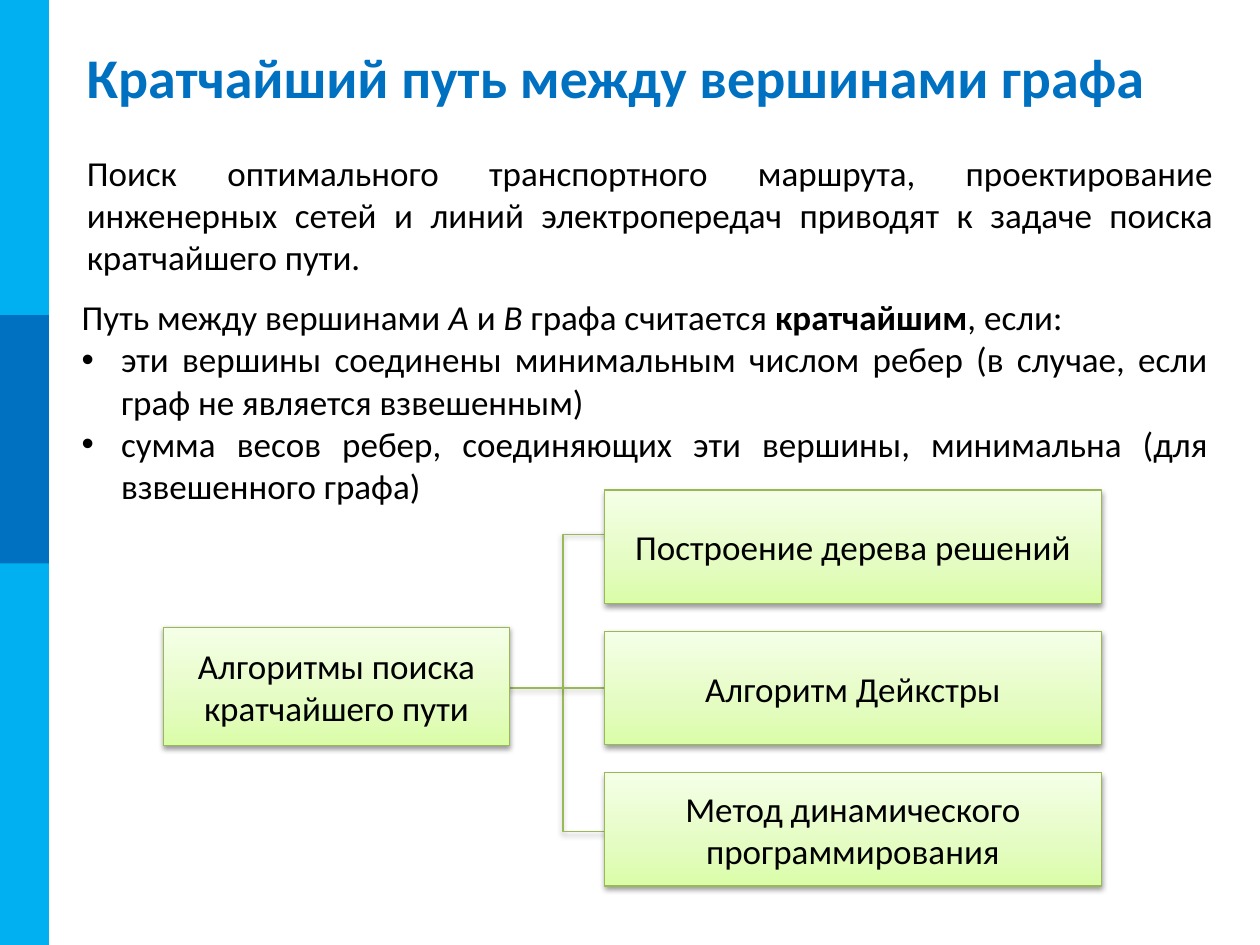
from lxml.etree import SubElement
from pptx import Presentation
from pptx.dml.color import RGBColor
from pptx.enum.shapes import MSO_CONNECTOR as Connector, MSO_SHAPE as Shape
from pptx.enum.text import MSO_ANCHOR as Anchor, PP_ALIGN as Align
from pptx.oxml.ns import qn
from pptx.util import Pt

TITLE = "Кратчайший путь между вершинами графа"
INTRO = [[("Поиск оптимального транспортного маршрута, проектирование инженерных сетей "
           "и линий электропередач приводят к задаче поиска кратчайшего пути.", "")]]
DEFINITION = [[("Путь между вершинами ", ""), ("А ", "i"), ("и ", ""), ("В ", "i"),
               ("графа считается ", ""), ("кратчайшим", "b"), (", если:", "")]]
CONDITIONS = [
    [("эти вершины соединены минимальным числом ребер "
      "(в случае, если граф не является взвешенным)", "")],
    [("сумма весов ребер, соединяющих эти вершины, минимальна "
      "(для взвешенного графа)", "")],
]
ROOT = "Алгоритмы поиска кратчайшего пути"
METHODS = ["Построение дерева решений", "Алгоритм Дейкстры",
           "Метод динамического программирования"]

SKY, BLUE, BLACK, GREEN = "00B0F0", "0070C0", "000000", "98B955"
GRADIENT = [(0, "DAFDA7"), (35, "E4FCC2"), (100, "F5FFE7")]

BAR_WIDTH = 28
ROOT_BOX = (93.5, 358.5, 197.7, 67.7)
METHOD_X, METHOD_Y, METHOD_W, METHOD_H, METHOD_PITCH = 345.6, 280.1, 283.7, 64.8, 80.7
BRACKET = [(361.4, 475.2), (321.8, 475.2), (321.8, 305.3), (352.8, 305.3)]
TRUNK_X, TRUNK_Y = 236.2, 393.1


def color(hex_code):
    return RGBColor.from_string(hex_code)


def style_run(run, size, hex_code, style=""):
    font = run.font
    font.name, font.size = "Calibri", Pt(size)
    font.color.rgb = color(hex_code)
    font.bold, font.italic = "b" in style, "i" in style


def add_text(box, paragraphs, size=20, hex_code=BLACK, align=Align.JUSTIFY, bullets_from=None):
    """Add a text box; paragraphs from index bullets_from on get a bullet."""
    frame = slide.shapes.add_textbox(*map(Pt, box)).text_frame
    frame.word_wrap = True
    for index, pieces in enumerate(paragraphs):
        paragraph = frame.add_paragraph() if index else frame.paragraphs[0]
        paragraph.alignment = align
        for text, style in pieces:
            run = paragraph.add_run()
            run.text = text
            style_run(run, size, hex_code, style)
        if bullets_from is not None and index >= bullets_from:
            props = paragraph._p.get_or_add_pPr()
            props.set("marL", str(Pt(22.5)))
            props.set("indent", str(-Pt(22.5)))
            SubElement(props, qn("a:buFont"), typeface="Arial")
            SubElement(props, qn("a:buChar"), char="•")
    return frame


def add_bar(top, height, hex_code):
    bar = slide.shapes.add_shape(Shape.RECTANGLE, 0, Pt(top), Pt(BAR_WIDTH), Pt(height))
    bar.shadow.inherit = False
    bar.fill.solid()
    bar.fill.fore_color.rgb = color(hex_code)
    bar.line.fill.background()


def outline(item):
    """Give a diagram part its green line and soft shadow."""
    item.line.color.rgb = color(GREEN)
    item.line.width = Pt(0.75)
    effects = SubElement(item._element.spPr, qn("a:effectLst"))
    shadow = SubElement(effects, qn("a:outerShdw"), blurRad=str(Pt(3.15)), dist=str(Pt(1.57)),
                        dir="5400000", rotWithShape="0")
    black = SubElement(shadow, qn("a:srgbClr"), val=BLACK)
    SubElement(black, qn("a:alpha"), val="38000")


def add_box(text, box):
    shape = slide.shapes.add_shape(Shape.RECTANGLE, *map(Pt, box))
    shape.fill.gradient()
    shape.fill.gradient_angle = 90
    stops = shape._element.spPr.find(".//" + qn("a:gsLst"))
    for stop in list(stops):
        stops.remove(stop)
    for percent, hex_code in GRADIENT:
        stop = SubElement(stops, qn("a:gs"), pos=str(percent * 1000))
        SubElement(stop, qn("a:srgbClr"), val=hex_code)
    outline(shape)
    frame = shape.text_frame
    frame.text = text
    frame.word_wrap = True
    frame.vertical_anchor = Anchor.MIDDLE
    frame.paragraphs[0].alignment = Align.CENTER
    style_run(frame.paragraphs[0].runs[0], 20, BLACK)


prs = Presentation()
prs.slide_width, prs.slide_height = Pt(720), Pt(540)
slide = prs.slides.add_slide(prs.slide_layouts[6])

add_bar(0, 540, SKY)
add_bar(180, 142, BLUE)

title = add_text((42.5, 21.6, 652.3, 43.9), [[(TITLE, "b")]], 32, BLUE, Align.LEFT)
title.vertical_anchor = Anchor.MIDDLE
add_text((39.6, 165.6, 658, 128), DEFINITION + CONDITIONS, bullets_from=len(DEFINITION))
add_text((42.5, 82.8, 658, 80), INTRO)

start, *corners = [(Pt(x), Pt(y)) for x, y in BRACKET]
builder = slide.shapes.build_freeform(*start)
builder.add_line_segments(corners, close=False)
bracket = builder.convert_to_shape()
bracket.fill.background()
outline(bracket)

outline(slide.shapes.add_connector(
    Connector.STRAIGHT, Pt(TRUNK_X), Pt(TRUNK_Y), Pt(METHOD_X), Pt(TRUNK_Y)))

add_box(ROOT, ROOT_BOX)
for row, method in enumerate(METHODS):
    add_box(method, (METHOD_X, METHOD_Y + row * METHOD_PITCH, METHOD_W, METHOD_H))

prs.save("out.pptx")
